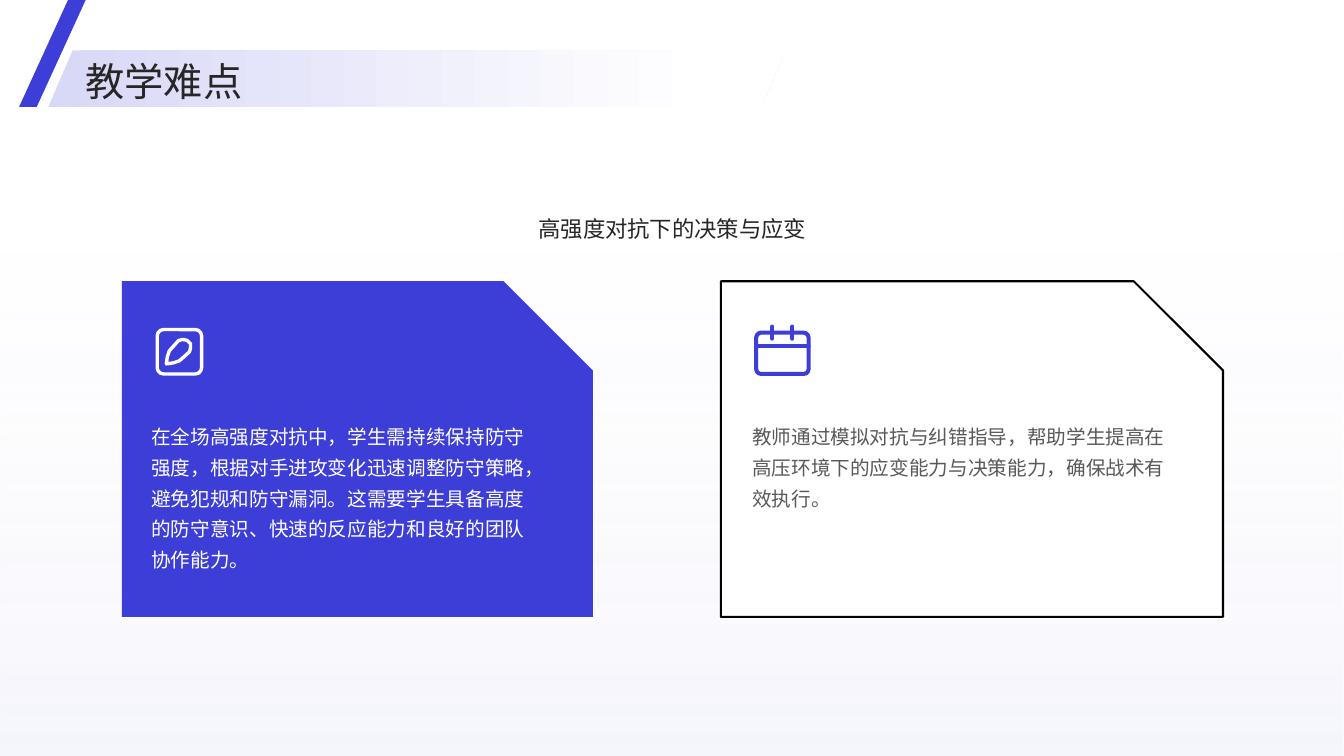
"""Build the teaching-difficulties slide with two snipped cards."""
from dataclasses import dataclass, field
from typing import Any, Optional

from pptx import Presentation
from pptx.dml.color import RGBColor
from pptx.enum.shapes import MSO_CONNECTOR, MSO_SHAPE
from pptx.enum.text import MSO_ANCHOR, PP_ALIGN
from pptx.oxml.ns import qn
from pptx.shapes.autoshape import Shape
from pptx.shapes.shapetree import SlideShapes
from pptx.util import Inches, Pt
from lxml.etree import SubElement

INDIGO = RGBColor(0x3D, 0x3E, 0xD7)
LAVENDER = RGBColor(0xD8, 0xD8, 0xF7)
WHITE = RGBColor(0xFF, 0xFF, 0xFF)
BLACK = RGBColor(0x00, 0x00, 0x00)
CHARCOAL = RGBColor(0x26, 0x26, 0x26)
GREY = RGBColor(0x59, 0x59, 0x59)
FONT = "Noto Sans CJK SC"
SLIDE_WIDTH, SLIDE_HEIGHT = 13.33, 7.5
CARD_TOP, CARD_HEIGHT = 2.79, 3.33

Box = tuple[float, float, float, float]


@dataclass(frozen=True)
class Gradient:
    end: float
    angle: float
    alphas: tuple[int, int] = (100, 100)


@dataclass(frozen=True)
class Panel:
    preset: MSO_SHAPE
    box: Box
    fill: RGBColor | Gradient | None = None
    adjust: Optional[float] = None
    outline: Optional[RGBColor] = None
    weight: float = 1.5


@dataclass(frozen=True)
class Caption:
    words: str
    box: Box
    size: float
    color: RGBColor
    spacing: float
    frame: dict[str, Any] = field(default_factory=dict)
    align: PP_ALIGN = PP_ALIGN.LEFT


@dataclass(frozen=True)
class Stroke:
    start: tuple[float, float]
    end: tuple[float, float]


BACKDROP = Panel(MSO_SHAPE.RECTANGLE, (0, 0, SLIDE_WIDTH, SLIDE_HEIGHT), Gradient(0.85, 90, (25, 0)))
CARDS = (
    Panel(MSO_SHAPE.SNIP_1_RECTANGLE, (1.21, CARD_TOP, 4.67, CARD_HEIGHT), INDIGO, 0.266),
    Panel(MSO_SHAPE.SNIP_1_RECTANGLE, (7.15, CARD_TOP, 4.98, CARD_HEIGHT), WHITE, 0.266, BLACK),
)
ICON_FRAMES = (
    Panel(MSO_SHAPE.ROUNDED_RECTANGLE, (1.56, 3.27, 0.44, 0.44), None, 0.14, WHITE, 2.4),
    Panel(MSO_SHAPE.ROUNDED_RECTANGLE, (7.5, 3.3, 0.52, 0.41), None, 0.12, INDIGO, 2.9),
)
PEN = ((1.65, 3.61), (1.66, 3.54), (1.68, 3.48), (1.77, 3.38), (1.8, 3.37), (1.83, 3.37),
       (1.86, 3.38), (1.89, 3.41), (1.89, 3.45), (1.88, 3.49), (1.78, 3.58), (1.72, 3.6))
CALENDAR_STROKES = (
    Stroke((7.5, 3.43), (8.02, 3.43)),
    *(Stroke((ring, 3.24), (ring, 3.36)) for ring in (7.66, 7.86)),
)
HEADER = (
    Panel(MSO_SHAPE.PARALLELOGRAM, (0.48, 0.5, 7.31, 0.56), Gradient(0.89, 0), 0.429),
    Panel(MSO_SHAPE.PARALLELOGRAM, (0.19, 0, 0.66, 1.06), INDIGO, 0.735),
)
CAPTIONS = (
    Caption("在全场高强度对抗中，学生需持续保持防守强度，根据对手进攻变化迅速调整防守策略，"
            "避免犯规和防守漏洞。这需要学生具备高度的防守意识、快速的反应能力和良好的团队协作能力。",
            (1.5, 4.15, 3.89, 1.53), 14, WHITE, 1.3),
    Caption("教师通过模拟对抗与纠错指导，帮助学生提高在高压环境下的应变能力与决策能力，确保战术有效执行。",
            (7.46, 4.15, 4.15, 1.53), 14, GREY, 1.3),
    Caption("高强度对抗下的决策与应变", (0.74, 1.46, 11.86, 0.94), 16, CHARCOAL, 1.5,
            {"vertical_anchor": MSO_ANCHOR.BOTTOM}, PP_ALIGN.CENTER),
    Caption("教学难点", (0.85, 0.52, 11.75, 0.51), 28, CHARCOAL, 1.1,
            {"vertical_anchor": MSO_ANCHOR.MIDDLE}),
)
FRAME_FORMAT = {"word_wrap": True, "margin_left": 0, "margin_top": 0,
                "margin_right": 0, "margin_bottom": 0}


def apply_format(target: Any, values: dict[str, Any]) -> None:
    """Set every named attribute on the target."""
    for name, value in values.items():
        setattr(target, name, value)


def paint_gradient(shape: Shape, gradient: Gradient) -> None:
    """Fade the shape from lavender to white."""
    shape.fill.gradient()
    shape.fill.gradient_angle = gradient.angle
    stops = zip(shape.fill.gradient_stops, (0, gradient.end), (LAVENDER, WHITE))
    for stop, position, color in stops:
        stop.position = position
        stop.color.rgb = color
    for color_node, alpha in zip(shape._element.iter(qn("a:srgbClr")), gradient.alphas):
        if alpha < 100:
            SubElement(color_node, qn("a:alpha"), val=str(alpha * 1000))


def style_outline(shape: Any, color: Optional[RGBColor], weight: float) -> None:
    """Draw the outline, or hide it when there is no colour."""
    if color is None:
        shape.line.fill.background()
        return
    shape.line.color.rgb = color
    shape.line.width = Pt(weight)


def draw_panel(shapes: SlideShapes, panel: Panel) -> None:
    """Draw one preset shape."""
    shape = shapes.add_shape(panel.preset, *map(Inches, panel.box))
    shape.shadow.inherit = False
    if panel.adjust is not None:
        shape.adjustments[0] = panel.adjust
    if isinstance(panel.fill, Gradient):
        paint_gradient(shape, panel.fill)
    elif panel.fill is None:
        shape.fill.background()
    else:
        shape.fill.solid()
        shape.fill.fore_color.rgb = panel.fill
    style_outline(shape, panel.outline, panel.weight)


def draw_pen(shapes: SlideShapes) -> None:
    """Draw the pen inside the first icon."""
    points = [(Inches(x), Inches(y)) for x, y in PEN]
    builder = shapes.build_freeform(*points[0])
    builder.add_line_segments(points[1:], close=True)
    pen = builder.convert_to_shape()
    pen.shadow.inherit = False
    pen.fill.background()
    style_outline(pen, WHITE, 2.4)


def draw_stroke(shapes: SlideShapes, stroke: Stroke) -> None:
    """Draw one round-ended calendar stroke."""
    line = shapes.add_connector(MSO_CONNECTOR.STRAIGHT, *map(Inches, stroke.start + stroke.end))
    style_outline(line, INDIGO, 2.9)
    line.line._get_or_add_ln().set("cap", "rnd")
    SubElement(line._element.spPr, qn("a:effectLst"))


def write_caption(shapes: SlideShapes, caption: Caption) -> None:
    """Write one single-paragraph text box."""
    frame = shapes.add_textbox(*map(Inches, caption.box)).text_frame
    apply_format(frame, FRAME_FORMAT | caption.frame)
    paragraph = frame.paragraphs[0]
    apply_format(paragraph, {"alignment": caption.align, "line_spacing": caption.spacing})
    run = paragraph.add_run()
    run.text = caption.words
    apply_format(run.font, {"size": Pt(caption.size), "name": FONT})
    run.font.color.rgb = caption.color
    SubElement(run._r.get_or_add_rPr(), qn("a:ea"), typeface=FONT)


def main() -> None:
    """Assemble and save the slide."""
    deck = Presentation()
    apply_format(deck, {"slide_width": Inches(SLIDE_WIDTH), "slide_height": Inches(SLIDE_HEIGHT)})
    shapes = deck.slides.add_slide(deck.slide_layouts[6]).shapes
    for panel in (BACKDROP, *CARDS, *ICON_FRAMES, *HEADER):
        draw_panel(shapes, panel)
    draw_pen(shapes)
    for stroke in CALENDAR_STROKES:
        draw_stroke(shapes, stroke)
    for caption in CAPTIONS:
        write_caption(shapes, caption)
    deck.save("out.pptx")


if __name__ == "__main__":
    main()
